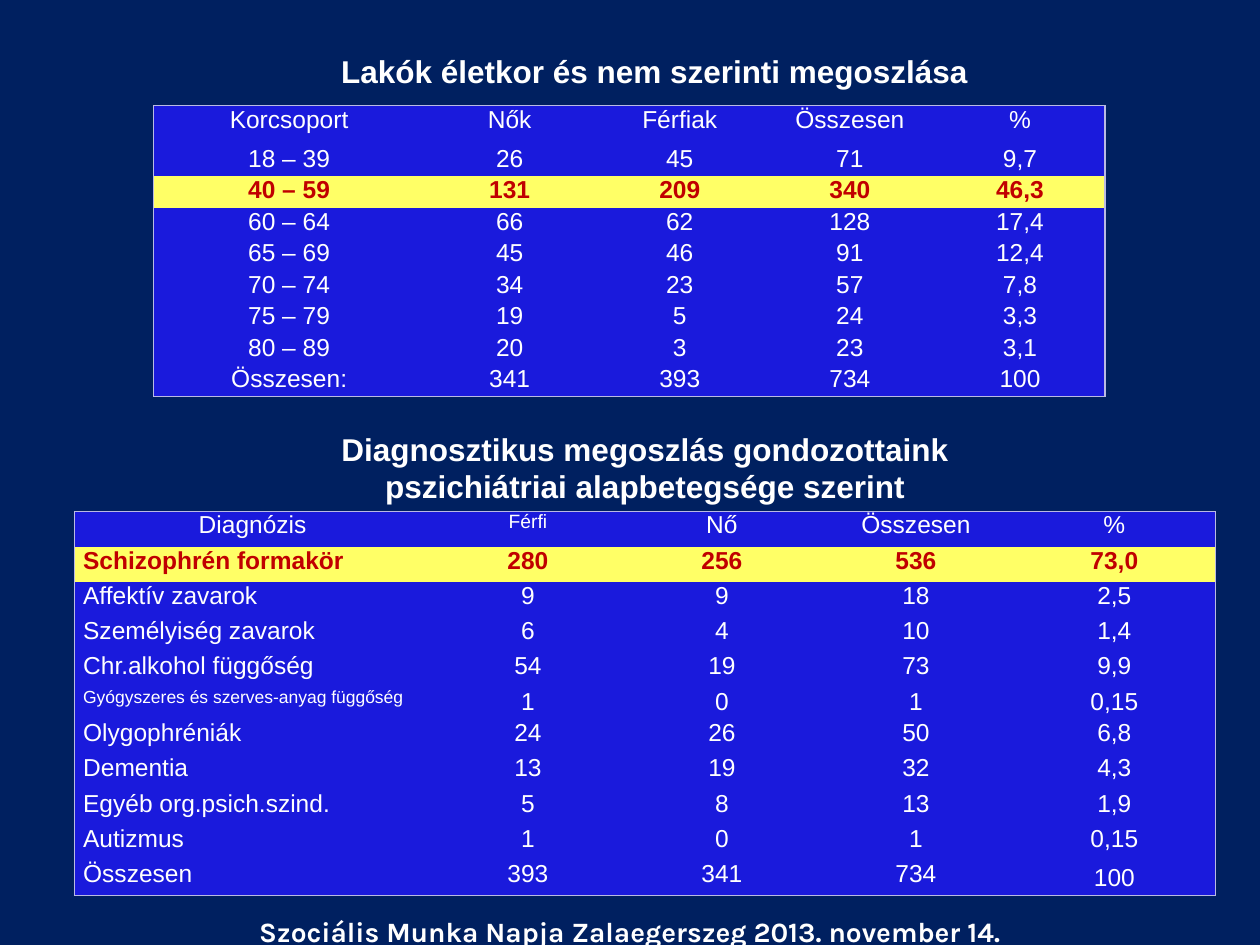
import pptx
import pptx.util
from lxml import etree
from pptx.dml.color import RGBColor
from pptx.enum.text import MSO_ANCHOR, PP_ALIGN
from pptx.oxml.ns import qn
from pptx.util import Inches, Pt

COLORS = {
    "background": "002060",
    "table": "1A1ADC",
    "highlight": "FFFF66",
    "highlight_text": "C00000",
    "border": "BABAE3",
    "text": "FFFFFF",
}
NO_GRID_STYLE = "{2D5ABB26-0587-4C30-8999-92F81FD0307C}"

AGE_ROWS = [
    ["Korcsoport", "Nők", "Férfiak", "Összesen", "%"],
    ["18 – 39", "26", "45", "71", "9,7"],
    ["40 – 59", "131", "209", "340", "46,3"],
    ["60 – 64", "66", "62", "128", "17,4"],
    ["65 – 69", "45", "46", "91", "12,4"],
    ["70 – 74", "34", "23", "57", "7,8"],
    ["75 – 79", "19", "5", "24", "3,3"],
    ["80 – 89", "20", "3", "23", "3,1"],
    ["Összesen:", "341", "393", "734", "100"],
]
DIAGNOSIS_ROWS = [
    ["Diagnózis", "Férfi", "Nő", "Összesen", "%"],
    ["Schizophrén formakör", "280", "256", "536", "73,0"],
    ["Affektív zavarok", "9", "9", "18", "2,5"],
    ["Személyiség zavarok", "6", "4", "10", "1,4"],
    ["Chr.alkohol függőség", "54", "19", "73", "9,9"],
    ["Gyógyszeres és szerves-anyag függőség", "1", "0", "1", "0,15"],
    ["Olygophréniák", "24", "26", "50", "6,8"],
    ["Dementia", "13", "19", "32", "4,3"],
    ["Egyéb org.psich.szind.", "5", "8", "13", "1,9"],
    ["Autizmus", "1", "0", "1", "0,15"],
    ["Összesen", "393", "341", "734", "100"],
]


def color(name):
    """Return the named colour."""
    return RGBColor.from_string(COLORS[name])


def format_text(frame, size, font="Arial", bold=False, ink="text", align=PP_ALIGN.CENTER):
    """Format every paragraph and run of a text frame."""
    for paragraph in frame.paragraphs:
        paragraph.alignment = align
        for run in paragraph.runs:
            run.font.size = Pt(size)
            run.font.name = font
            run.font.bold = bold
            run.font.color.rgb = color(ink)


def fill_heading(shape, left, top, width, height, text, size=18, font="Arial"):
    """Place a bold centred heading in a text shape."""
    shape.left, shape.top = Inches(left), Inches(top)
    shape.width, shape.height = Inches(width), Inches(height)
    frame = shape.text_frame
    frame.word_wrap = True
    frame.vertical_anchor = MSO_ANCHOR.TOP
    frame.text = text
    format_text(frame, size, font, bold=True)


def add_heading(slide, *place_and_text, **style):
    """Add a text box that holds a heading."""
    box = slide.shapes.add_textbox(0, 0, 0, 0)
    fill_heading(box, *place_and_text, **style)


def add_borders(cell, sides):
    """Draw thin lines on the given sides of a cell."""
    properties = cell._tc.get_or_add_tcPr()
    for side in sides:
        line = etree.SubElement(properties, qn(f"a:ln{side}"), w=str(Pt(0.75)))
        solid = etree.SubElement(line, qn("a:solidFill"))
        etree.SubElement(solid, qn("a:srgbClr"), val=COLORS["border"])


def format_cell(cell, text, size, highlighted, align, sides):
    """Write one table cell with its fill and outer borders."""
    cell.margin_left = cell.margin_right = Inches(0.07)
    cell.margin_top = cell.margin_bottom = 0
    add_borders(cell, sides)
    cell.fill.solid()
    cell.fill.fore_color.rgb = color("highlight" if highlighted else "table")
    cell.text_frame.text = text
    ink = "highlight_text" if highlighted else "text"
    format_text(cell.text_frame, size, bold=highlighted, ink=ink, align=align)


def add_data_table(slide, left, top, widths, heights, rows, highlight,
                   label_align=PP_ALIGN.CENTER, small_sizes=None):
    """Add a framed table with one highlighted row and return it."""
    last_row, last_column = len(rows) - 1, len(widths) - 1
    frame = slide.shapes.add_table(
        len(rows), len(widths), Inches(left), Inches(top),
        Inches(sum(widths)), Inches(sum(heights)))
    table = frame.table
    table.first_row = table.horz_banding = False
    table._tbl.tblPr.find(qn("a:tableStyleId")).text = NO_GRID_STYLE
    for column, width in zip(table.columns, widths):
        column.width = Inches(width)
    for table_row, height in zip(table.rows, heights):
        table_row.height = Inches(height)
    for r, values in enumerate(rows):
        for c, value in enumerate(values):
            edges = {"L": c == 0, "R": c == last_column, "T": r == 0, "B": r == last_row}
            sides = [side for side, outer in edges.items() if outer]
            align = label_align if c == 0 and r > 0 else PP_ALIGN.CENTER
            size = (small_sizes or {}).get(value, 14)
            format_cell(table.cell(r, c), value, size, r == highlight, align, sides)
    return table


def main():
    """Build the slide and save it."""
    deck = pptx.Presentation()
    deck.slide_width, deck.slide_height = Inches(10), Inches(7.5)
    slide = deck.slides.add_slide(deck.slide_layouts[5])
    slide.background.fill.solid()
    slide.background.fill.fore_color.rgb = color("background")

    fill_heading(slide.shapes.title, 2.32, 0.36, 5.75, 0.4,
                 "Lakók életkor és nem szerinti megoszlása")
    add_data_table(slide, 1.22, 0.84, [2.15] + [1.35] * 4, [0.31] + [0.25] * 8,
                   AGE_ROWS, highlight=2)

    diagnoses = add_data_table(
        slide, 0.59, 4.06, [2.83] + [1.54] * 3 + [1.61],
        [0.28] * 5 + [0.25] + [0.28] * 5, DIAGNOSIS_ROWS, highlight=1,
        label_align=PP_ALIGN.JUSTIFY,
        small_sizes={"Férfi": 11, "Gyógyszeres és szerves-anyag függőség": 10})
    diagnoses.cell(len(DIAGNOSIS_ROWS) - 1, 4).vertical_anchor = MSO_ANCHOR.MIDDLE
    add_heading(slide, 1.5, 3.36, 7.24, 0.71,
                "Diagnosztikus megoszlás gondozottaink\npszichiátriai alapbetegsége szerint")

    add_heading(slide, 0, 7.21, 10, 0.29,
                "Szociális Munka Napja Zalaegerszeg 2013. november 14.",
                size=16, font="Karla")
    deck.save("out.pptx")


if __name__ == "__main__":
    main()
